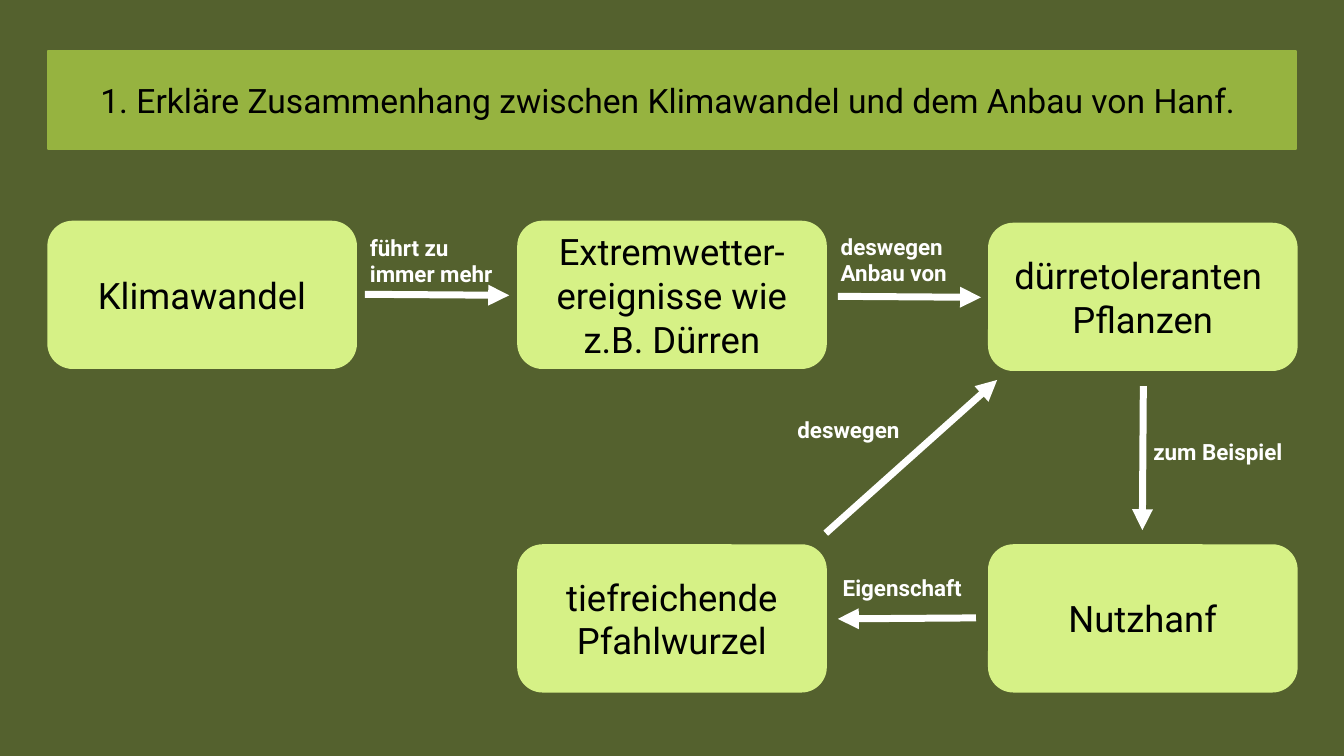
import pptx
import pptx.util
import pptx.dml.color
import pptx.enum.shapes
import pptx.enum.text
import pptx.oxml
import pptx.oxml.ns
import lxml.etree

PX = 9144  # 100 px to the inch
FONT = "Roboto"
WHITE, BLACK = "FFFFFF", "000000"
LIME, OLIVE, DARK_OLIVE = "D6F186", "96B340", "54612E"
DRAWING = pptx.oxml.ns.nsdecls("a")


def color(value):
    return pptx.dml.color.RGBColor.from_string(value)


def write(shape, text, size, ink, bold=False, centred=True):
    frame = shape.text_frame
    frame.text = text
    frame.word_wrap = True
    frame.auto_size = pptx.enum.text.MSO_AUTO_SIZE.NONE
    anchors = pptx.enum.text.MSO_ANCHOR
    frame.vertical_anchor = anchors.MIDDLE if centred else anchors.TOP
    for para in frame.paragraphs:
        aligns = pptx.enum.text.PP_ALIGN
        para.alignment = aligns.CENTER if centred else aligns.LEFT
        for span in para.runs:
            span.font.name = FONT
            span.font.size = pptx.util.Pt(size)
            span.font.bold = bold
            span.font.color.rgb = color(ink)


deck = pptx.Presentation()
deck.slide_width, deck.slide_height = 1333 * PX, 750 * PX
page = deck.slides.add_slide(deck.slide_layouts[5])
page.background.fill.solid()
page.background.fill.fore_color.rgb = color(DARK_OLIVE)

# Title in a rounded bar
title = page.shapes.title
title.left, title.top, title.width, title.height = [v * PX for v in (48, 51, 1237, 97)]
title._element.spPr.append(pptx.oxml.parse_xml(
    f'<a:prstGeom {DRAWING} prst="roundRect"><a:avLst/></a:prstGeom>'))
title.fill.solid()
title.fill.fore_color.rgb = color(OLIVE)
title.line.color.rgb = color(OLIVE)
title.line.width = pptx.util.Pt(1.5)
write(title, "1. Erkläre Zusammenhang zwischen Klimawandel und dem Anbau von Hanf. ", 24, BLACK)

# Labels beside the arrows
labels = [
    ("führt zu\nimmer mehr", 357, 227, 170, 64),
    ("deswegen", 781, 408, 138, 37),
    ("deswegen Anbau von", 824, 226, 138, 64),
    ("zum Beispiel", 1134, 430, 159, 37),
    ("Eigenschaft", 826, 565, 151, 37),
]
for text, left, top, width, height in labels:
    label = page.shapes.add_textbox(left * PX, top * PX, width * PX, height * PX)
    write(label, text, 16, WHITE, bold=True, centred=False)

# Concept boxes in three columns
COLUMNS = (48, 514, 981)
concepts = [
    ("Klimawandel", 0, 220),
    ("Extremwetter-ereignisse wie z.B. Dürren", 1, 220),
    ("dürretoleranten \nPflanzen", 2, 222),
    ("tiefreichende\nPfahlwurzel", 1, 541),
    ("Nutzhanf", 2, 541),
]
for text, column, top in concepts:
    box = page.shapes.add_shape(
        pptx.enum.shapes.MSO_SHAPE.ROUNDED_RECTANGLE,
        COLUMNS[column] * PX, top * PX, 305 * PX, 145 * PX)
    box.shadow.inherit = False
    box.fill.solid()
    box.fill.fore_color.rgb = color(LIME)
    box.line.color.rgb = color(LIME)
    box.line.width = pptx.util.Pt(1.5)
    write(box, text, 26, BLACK)

# Arrows between the concepts
arrows = [
    (362, 292, 505, 293),
    (831, 294, 973, 295),
    (1134, 383, 1133, 526),
    (968, 613, 831, 614),
    (819, 529, 989, 377),
]
for ends in arrows:
    arrow = page.shapes.add_connector(
        pptx.enum.shapes.MSO_CONNECTOR.STRAIGHT, *[v * PX for v in ends])
    arrow.line.color.rgb = color(WHITE)
    arrow.line.width = pptx.util.Pt(5)
    arrow.line._get_or_add_ln().append(
        pptx.oxml.parse_xml(f'<a:tailEnd {DRAWING} type="triangle"/>'))
    lxml.etree.SubElement(arrow._element.spPr, pptx.oxml.ns.qn("a:effectLst"))

deck.save("out.pptx")
